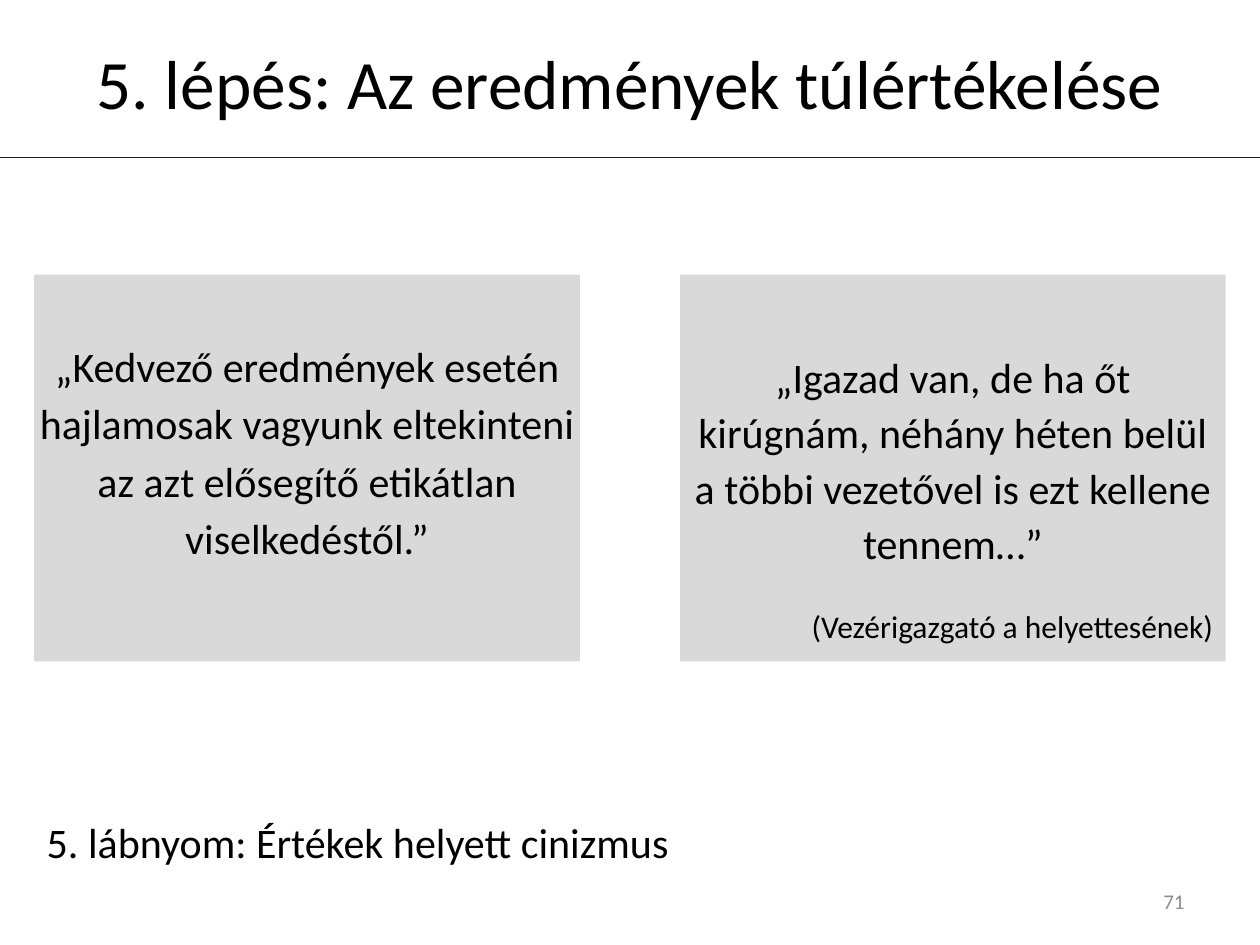
from dataclasses import dataclass
from typing import Optional

import pptx
import pptx.dml.color
import pptx.enum.shapes
import pptx.enum.text
import pptx.oxml.ns
import pptx.util
from lxml import etree

Pt = pptx.util.Pt
Align = pptx.enum.text.PP_ALIGN
Anchor = pptx.enum.text.MSO_ANCHOR

FONT = "Calibri"
BLACK = "000000"
PANEL_GREY = "D9D9D9"


@dataclass
class Line:
    text: str
    size: float
    align: Align = Align.LEFT
    color: str = BLACK
    spacing: float = 1.0
    before: float = 0


@dataclass
class Block:
    left: float
    top: float
    width: float
    height: float
    lines: list[Line]
    anchor: Anchor = Anchor.TOP
    insets: tuple[float, float, float, float] = (7.2, 3.6, 7.2, 3.6)
    fill: Optional[str] = None


def rgb(code: str) -> pptx.dml.color.RGBColor:
    return pptx.dml.color.RGBColor.from_string(code)


def draw_block(page, block: Block) -> None:
    place = [Pt(n) for n in (block.left, block.top, block.width, block.height)]
    if block.fill:
        box = page.shapes.add_shape(
            pptx.enum.shapes.MSO_SHAPE.RECTANGLE, *place)
        box.shadow.inherit = False
        box.fill.solid()
        box.fill.fore_color.rgb = rgb(block.fill)
        box.line.fill.background()
    else:
        box = page.shapes.add_textbox(*place)
    frame = box.text_frame
    frame.word_wrap = True
    frame.vertical_anchor = block.anchor
    (frame.margin_left, frame.margin_top,
     frame.margin_right, frame.margin_bottom) = map(Pt, block.insets)
    for index, line in enumerate(block.lines):
        para = frame.add_paragraph() if index else frame.paragraphs[0]
        para.alignment = line.align
        para.line_spacing = line.spacing
        para.space_before = Pt(line.before)
        span = para.add_run()
        span.text = line.text
        span.font.name = FONT
        span.font.size = Pt(line.size)
        span.font.color.rgb = rgb(line.color)


def draw_rule(page, top: float, width: float, color: str) -> None:
    rule = page.shapes.add_connector(
        pptx.enum.shapes.MSO_CONNECTOR.STRAIGHT, 0, Pt(top), Pt(width), Pt(top))
    rule.line.color.rgb = rgb(color)
    rule.line.width = Pt(1)
    etree.SubElement(rule._element.spPr, pptx.oxml.ns.qn("a:effectLst"))


# Page geometry: two equal panels inside the same side margin
PAGE_WIDTH, PAGE_HEIGHT = 720, 540
MARGIN = 19.6
PANEL_TOP, PANEL_WIDTH, PANEL_HEIGHT = 157, 311.8, 221

TITLE = Block(36, 21.6, 648, 50.4, [
    Line("5. lépés: Az eredmények túlértékelése", 39.6, Align.CENTER),
], Anchor.MIDDLE)

CLAIM = Block(MARGIN, PANEL_TOP, PANEL_WIDTH, PANEL_HEIGHT, [
    Line("„Kedvező eredmények esetén hajlamosak vagyunk eltekinteni "
         "az azt elősegítő etikátlan viselkedéstől.”",
         24, Align.CENTER, spacing=1.14),
], insets=(0, 33.4, 0, 0), fill=PANEL_GREY)

QUOTE = Block(PAGE_WIDTH - MARGIN - PANEL_WIDTH, PANEL_TOP,
              PANEL_WIDTH, PANEL_HEIGHT, [
    Line("„Igazad van, de ha őt kirúgnám, néhány héten belül "
         "a többi vezetővel is ezt kellene tennem…”",
         24, Align.CENTER, spacing=1.1),
    Line("(Vezérigazgató a helyettesének)", 18, Align.RIGHT, before=22),
], insets=(7.2, 41, 7.2, 3.6), fill=PANEL_GREY)

FOOTPRINT = Block(MARGIN, 463, PAGE_WIDTH - 2 * MARGIN, 36, [
    Line("5. lábnyom: Értékek helyett cinizmus", 24),
])

PAGE_NUMBER = Block(516, 500.4, 168, 28.8, [
    Line("71", 12, Align.RIGHT, "8C8C8C"),
], Anchor.MIDDLE)


def main() -> None:
    deck = pptx.Presentation()
    deck.slide_width, deck.slide_height = Pt(PAGE_WIDTH), Pt(PAGE_HEIGHT)
    page = deck.slides.add_slide(deck.slide_layouts[6])

    # Heading rule, then all text from top to bottom
    draw_rule(page, 90, PAGE_WIDTH, "003300")
    for block in (TITLE, QUOTE, CLAIM, FOOTPRINT, PAGE_NUMBER):
        draw_block(page, block)

    deck.save("out.pptx")


if __name__ == "__main__":
    main()
